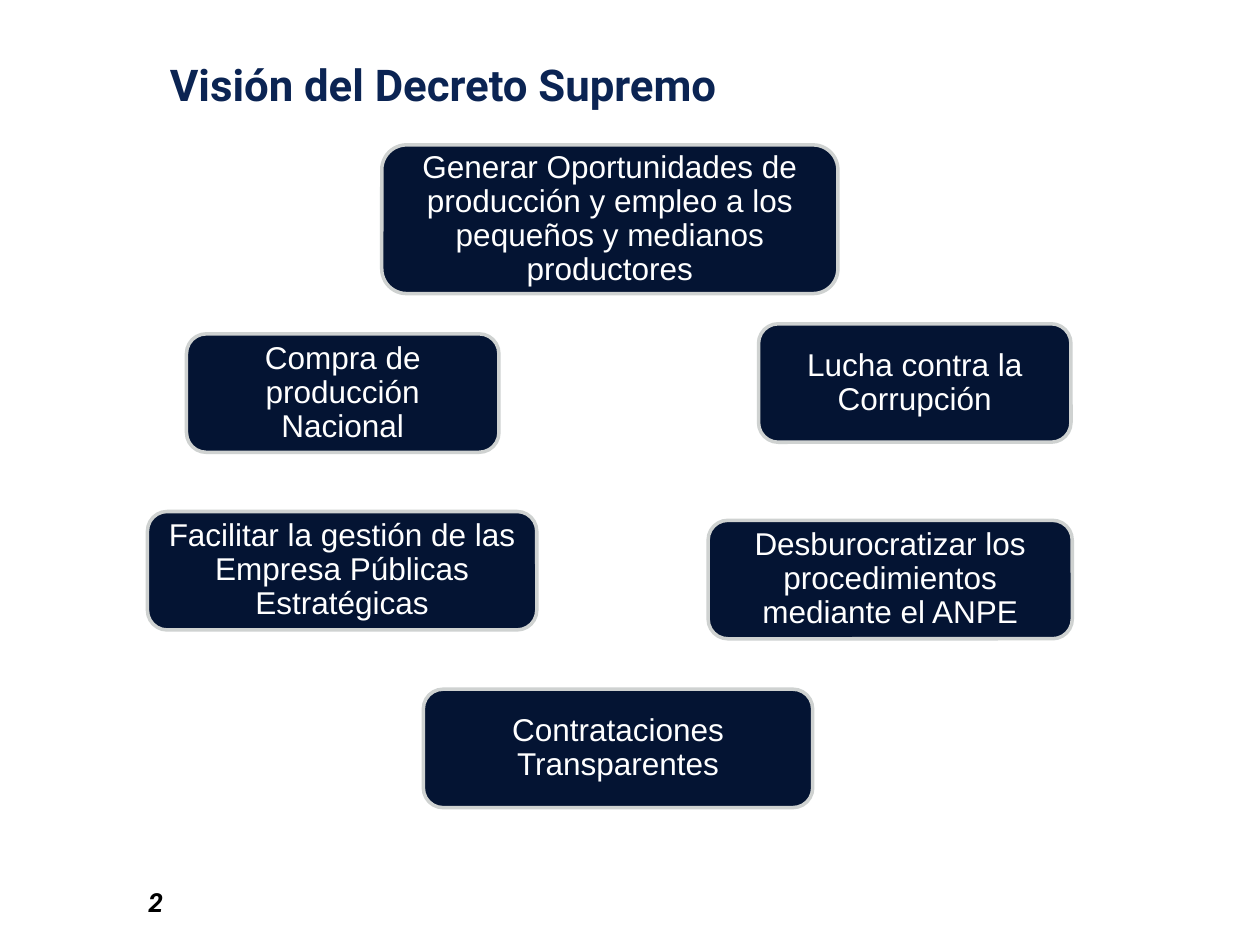
from pptx import Presentation
from pptx.dml.color import RGBColor
from pptx.enum.shapes import MSO_SHAPE as Shape
from pptx.enum.text import MSO_ANCHOR as Anchor, PP_ALIGN as Align
from pptx.util import Inches, Pt

NAVY = RGBColor(0x04, 0x14, 0x33)
TITLE_BLUE = RGBColor(0x0B, 0x24, 0x53)
GREY = RGBColor(0xCF, 0xD2, 0xD1)
WHITE = RGBColor(0xFF, 0xFF, 0xFF)
BLACK = RGBColor(0, 0, 0)

# Content: text, (left, top, width, height), anchor, font
LABELS = [
    ("Visión del Decreto Supremo", (1.25, 0.17, 8.42, 1), Anchor.MIDDLE,
     {"name": "Roboto", "size": Pt(25), "bold": True}, TITLE_BLUE),
    ("2", (1.08, 6.83, 2.33, 0.5), Anchor.BOTTOM,
     {"name": "Roboto", "size": Pt(15), "bold": True, "italic": True}, BLACK),
]

# Goals around the ring: text, left, top, width, height
ROW_HEIGHT = 0.94
GOALS = [
    ("Generar Oportunidades de producción y empleo a los pequeños y medianos productores",
     3.03, 1.15, 3.62, 1.18),
    ("Lucha contra la Corrupción", 6.02, 2.57, 2.48, ROW_HEIGHT),
    ("Desburocratizar los procedimientos mediante el ANPE", 5.62, 4.13, 2.89, ROW_HEIGHT),
    ("Facilitar la gestión de las Empresa Públicas Estratégicas", 1.17, 4.06, 3.09, ROW_HEIGHT),
    ("Compra de producción Nacional", 1.48, 2.65, 2.48, ROW_HEIGHT),
    ("Contrataciones Transparentes", 3.36, 5.47, 3.09, ROW_HEIGHT),
]
GOAL_FONT = {"name": "Arial", "size": Pt(18)}
GOAL_FRAME = {"margin_left": Inches(0.07), "margin_right": Inches(0.07),
              "margin_top": Inches(0.07), "margin_bottom": Inches(0.07)}
GOAL_PARAGRAPH = {"alignment": Align.CENTER, "line_spacing": 0.9}


def set_values(target, values):
    for key, value in values.items():
        setattr(target, key, value)


def write(shape, text, anchor, font, color):
    frame = shape.text_frame
    set_values(frame, {"word_wrap": True, "vertical_anchor": anchor})
    paragraph = frame.paragraphs[0]
    run = paragraph.add_run()
    run.text = text
    set_values(run.font, font)
    run.font.color.rgb = color
    return frame, paragraph


deck = Presentation()
deck.slide_width, deck.slide_height = Inches(10), Inches(7.5)
slide = deck.slides.add_slide(deck.slide_layouts[6])

# Title and page number
for text, box, anchor, font, color in LABELS:
    label = slide.shapes.add_textbox(*map(Inches, box))
    write(label, text, anchor, font, color)

# Goal boxes
for text, *box in GOALS:
    goal = slide.shapes.add_shape(Shape.ROUNDED_RECTANGLE, *map(Inches, box))
    goal.shadow.inherit = False
    goal.fill.solid()
    goal.fill.fore_color.rgb = NAVY
    goal.line.color.rgb = GREY
    goal.line.width = Pt(2)
    frame, paragraph = write(goal, text, Anchor.MIDDLE, GOAL_FONT, WHITE)
    set_values(frame, GOAL_FRAME)
    set_values(paragraph, GOAL_PARAGRAPH)

deck.save("out.pptx")
